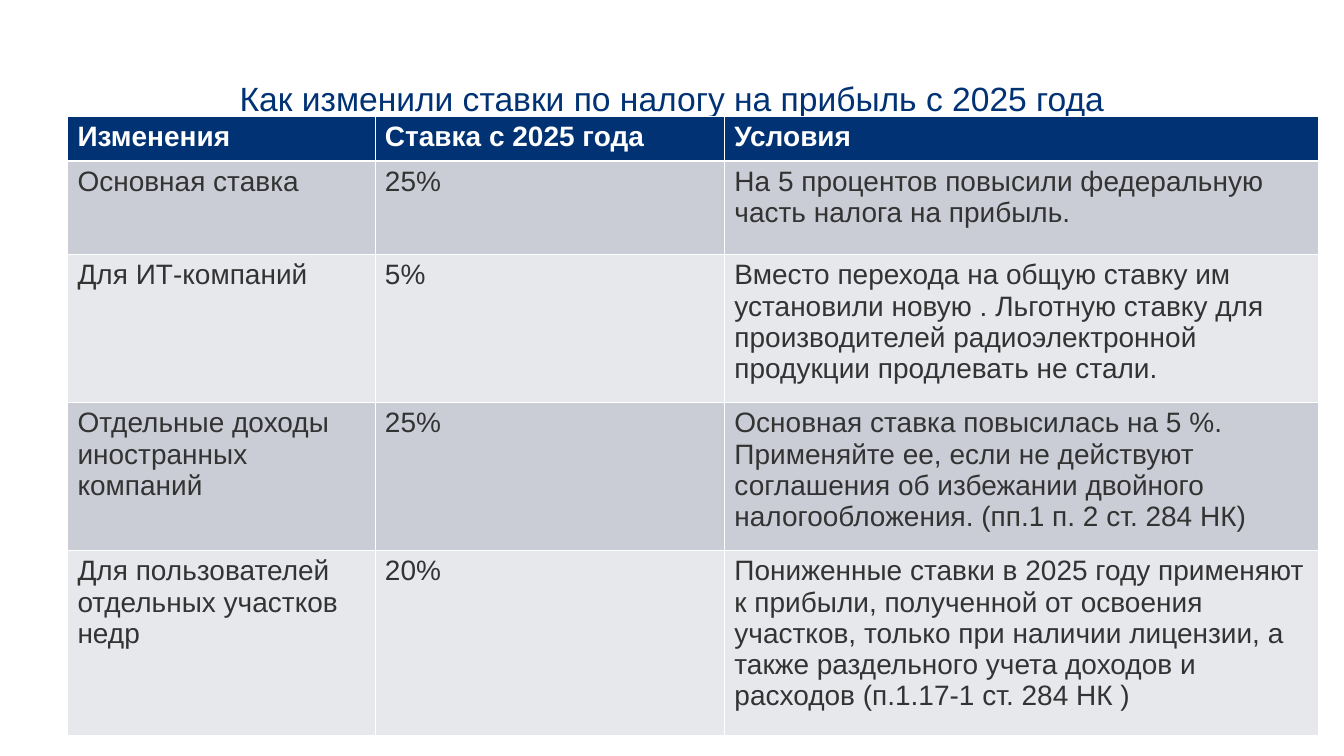
from dataclasses import dataclass

import pptx
import pptx.dml.color
import pptx.enum.text
import pptx.oxml
import pptx.oxml.ns
import pptx.table
import pptx.text.text
import pptx.util

Cm = pptx.util.Cm
Pt = pptx.util.Pt

NAVY = "003274"
WHITE = "FFFFFF"
TEXT = "333333"
BANDS = ("CBCDD6", "E7E8EC")
THIN, THICK = 0.45, 1.47
COL_WIDTHS = (7.75, 8.81, 14.96)


@dataclass(frozen=True)
class RateRow:
    height: float
    change: str
    rate: str
    terms: str


ROWS = (
    RateRow(1.12, "Изменения", "Ставка с 2025 года", "Условия"),
    RateRow(2.36, "Основная ставка", "25%",
            "На 5 процентов повысили федеральную часть налога на прибыль."),
    RateRow(3.73, "Для ИТ-компаний", "5%",
            "Вместо перехода на общую ставку им установили новую . Льготную ставку "
            "для производителей радиоэлектронной продукции продлевать не стали."),
    RateRow(3.73, "Отдельные доходы иностранных компаний", "25%",
            "Основная ставка повысилась на 5 %. Применяйте ее, если не действуют "
            "соглашения об избежании двойного налогообложения. (пп.1 п. 2 ст. 284 НК)"),
    RateRow(4.65, "Для пользователей отдельных участков недр", "20%",
            "Пониженные ставки в 2025 году применяют к прибыли, полученной от "
            "освоения участков, только при наличии лицензии, а также раздельного "
            "учета доходов и расходов (п.1.17-1 ст. 284 НК )"),
)


def rgb(value: str) -> pptx.dml.color.RGBColor:
    return pptx.dml.color.RGBColor.from_string(value)


def set_font(font: pptx.text.text.Font, size: float, color: str, bold: bool = False) -> None:
    font.name = "Arial"
    font.size = Pt(size)
    font.bold = bold
    font.color.rgb = rgb(color)


def add_border(cell: pptx.table._Cell, side: str, width: float) -> None:
    ns = pptx.oxml.ns.nsdecls("a")
    ln = pptx.oxml.parse_xml(
        f'<a:ln{side} {ns} w="{int(Pt(width))}"><a:solidFill>'
        f'<a:srgbClr val="{WHITE}"/></a:solidFill></a:ln{side}>'
    )
    cell._tc.get_or_add_tcPr().append(ln)


def draw_cell(cell: pptx.table._Cell, text: str, row: int) -> None:
    header = row == 0
    for side in "LRTB":
        under_header = (side == "B" and row == 0) or (side == "T" and row == 1)
        add_border(cell, side, THICK if under_header else THIN)
    cell.fill.solid()
    cell.fill.fore_color.rgb = rgb(NAVY if header else BANDS[(row - 1) % 2])
    cell.text = text
    set_font(cell.text_frame.paragraphs[0].font, 20, WHITE if header else TEXT, header)


def draw_title(sp, text: str) -> None:
    sp.left, sp.top, sp.width, sp.height = Cm(1.7), Cm(1.96), Cm(30.48), Cm(1.45)
    tf = sp.text_frame
    tf.text = text
    tf.word_wrap = True
    tf.auto_size = pptx.enum.text.MSO_AUTO_SIZE.NONE
    tf.vertical_anchor = pptx.enum.text.MSO_ANCHOR.TOP
    p = tf.paragraphs[0]
    p.alignment = pptx.enum.text.PP_ALIGN.CENTER
    p.line_spacing = 0.9
    p.space_before = Pt(0)
    set_font(p.font, 24, NAVY)


def draw_table(slide, rows: tuple[RateRow, ...]) -> None:
    height = sum(row.height for row in rows)
    table = slide.shapes.add_table(
        len(rows), len(COL_WIDTHS), Cm(1.7), Cm(2.93), Cm(sum(COL_WIDTHS)), Cm(height)
    ).table
    for column, width in zip(table.columns, COL_WIDTHS):
        column.width = Cm(width)
    for i, row in enumerate(rows):
        table.rows[i].height = Cm(row.height)
        for j, text in enumerate((row.change, row.rate, row.terms)):
            draw_cell(table.cell(i, j), text, i)


def main() -> None:
    prs = pptx.Presentation()
    prs.slide_width, prs.slide_height = Cm(33.88), Cm(19.05)
    slide = prs.slides.add_slide(prs.slide_layouts[5])
    draw_title(slide.shapes.title, "Как изменили ставки по налогу на прибыль с 2025 года")
    draw_table(slide, ROWS)
    prs.save("out.pptx")


if __name__ == "__main__":
    main()
